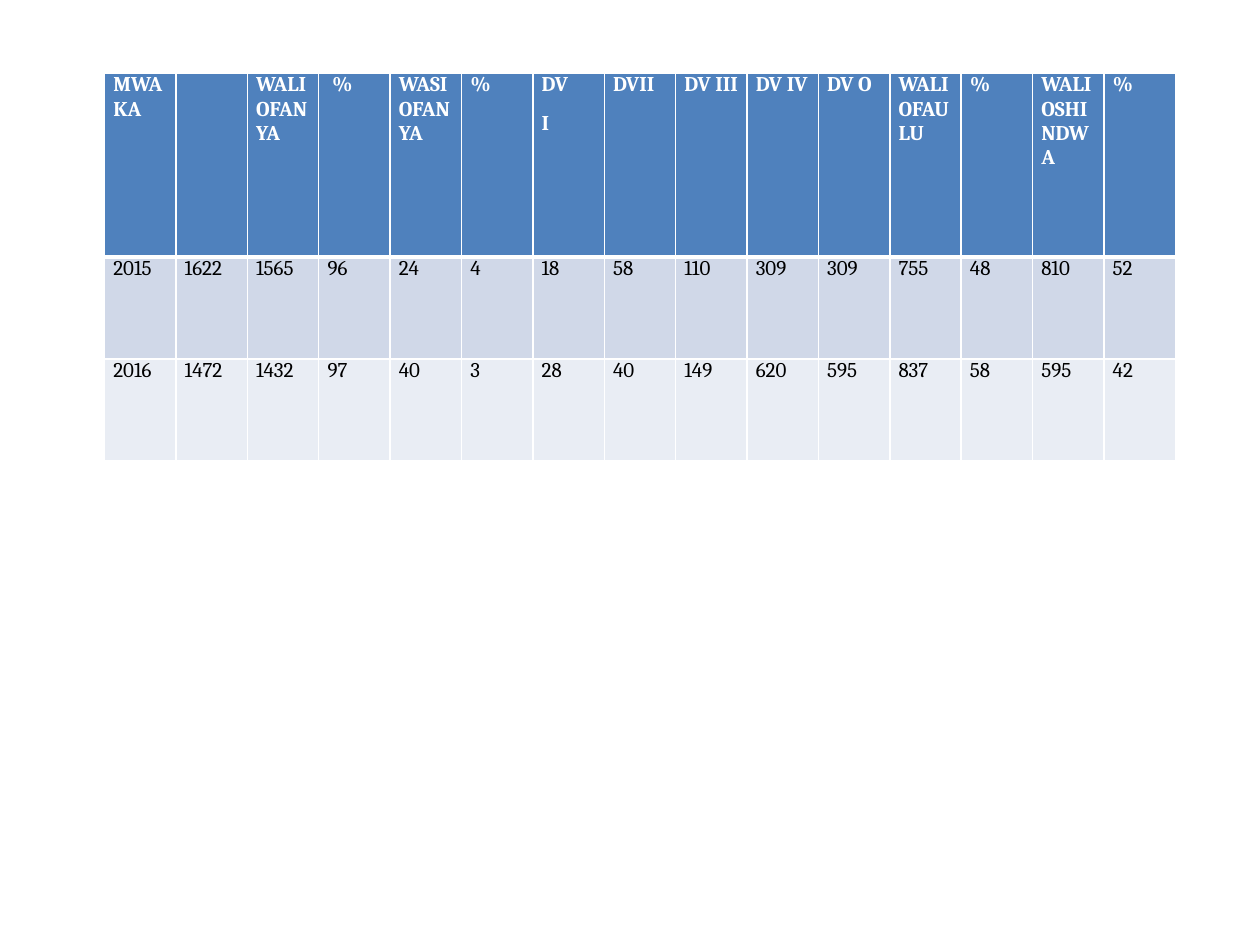
from lxml.etree import SubElement as sub
from pptx import Presentation
from pptx.dml.color import RGBColor as RGB
from pptx.enum.text import PP_ALIGN as Align
from pptx.oxml.ns import qn
from pptx.util import Inches, Pt

COLORS = {"head": "4F81BD", "odd": "D0D8E8", "even": "E9EDF4",
          "line": "FFFFFF", "light": "FFFFFF", "dark": "000000"}
FONT = "Cambria"

HEADS = ["MWAKA", "", "WALIOFANYA", " %", "WASIOFANYA", "%", "DV\nI", "DVII",
         "DV III", "DV IV", "DV O", "WALIOFAULU", "%", "WALIOSHINDWA", "%"]
RESULTS = [
    [2015, 1622, 1565, 96, 24, 4, 18, 58, 110, 309, 309, 755, 48, 810, 52],
    [2016, 1472, 1432, 97, 40, 3, 28, 40, 149, 620, 595, 837, 58, 595, 42],
]
HEIGHTS = [1.46, 0.81, 0.81]
WIDTH = 8.5


def add_lines(cell, widths):
    """Draw the cell borders; widths are points for left, right, top, bottom."""
    props = cell._tc.get_or_add_tcPr()
    for side, width in zip("LRTB", widths):
        line = sub(props, qn(f"a:ln{side}"), w=str(Pt(width)))
        fill = sub(line, qn("a:solidFill"))
        sub(fill, qn("a:srgbClr"), val=COLORS["line"])


def fill_cell(cell, text, back, fore, bold):
    cell.margin_left = cell.margin_right = Inches(0.07)
    cell.margin_top = cell.margin_bottom = 0
    cell.fill.solid()
    cell.fill.fore_color.rgb = RGB.from_string(COLORS[back])
    cell.text_frame.text = text
    for para in cell.text_frame.paragraphs:
        para.alignment = Align.JUSTIFY
        para.space_after = Pt(8)
        font = para.font
        font.name, font.size, font.bold = FONT, Pt(12), bold
        font.color.rgb = RGB.from_string(COLORS[fore])
        for run in para.runs:
            run.font.name, run.font.size, run.font.bold = FONT, Pt(12), bold
            run.font.color.rgb = RGB.from_string(COLORS[fore])


def add_results(slide):
    rows = [HEADS] + RESULTS
    frame = slide.shapes.add_table(len(rows), len(HEADS), Inches(0.83),
                                   Inches(0.58), Inches(WIDTH),
                                   Inches(sum(HEIGHTS)))
    table = frame.table
    for col in table.columns:
        col.width = Inches(WIDTH / len(HEADS))
    # Header row, then banded result rows
    looks = [("head", "light", True), ("odd", "dark", False),
             ("even", "dark", False)]
    rules = [(1, 1, 1, 3), (1, 1, 3, 1), (1, 1, 1, 1)]
    for r, values in enumerate(rows):
        table.rows[r].height = Inches(HEIGHTS[r])
        for c, value in enumerate(values):
            cell = table.cell(r, c)
            add_lines(cell, rules[r])
            fill_cell(cell, str(value), *looks[r])


def main():
    deck = Presentation()
    deck.slide_width, deck.slide_height = Inches(10), Inches(7.5)
    slide = deck.slides.add_slide(deck.slide_layouts[6])
    add_results(slide)
    deck.save("out.pptx")


if __name__ == "__main__":
    main()
